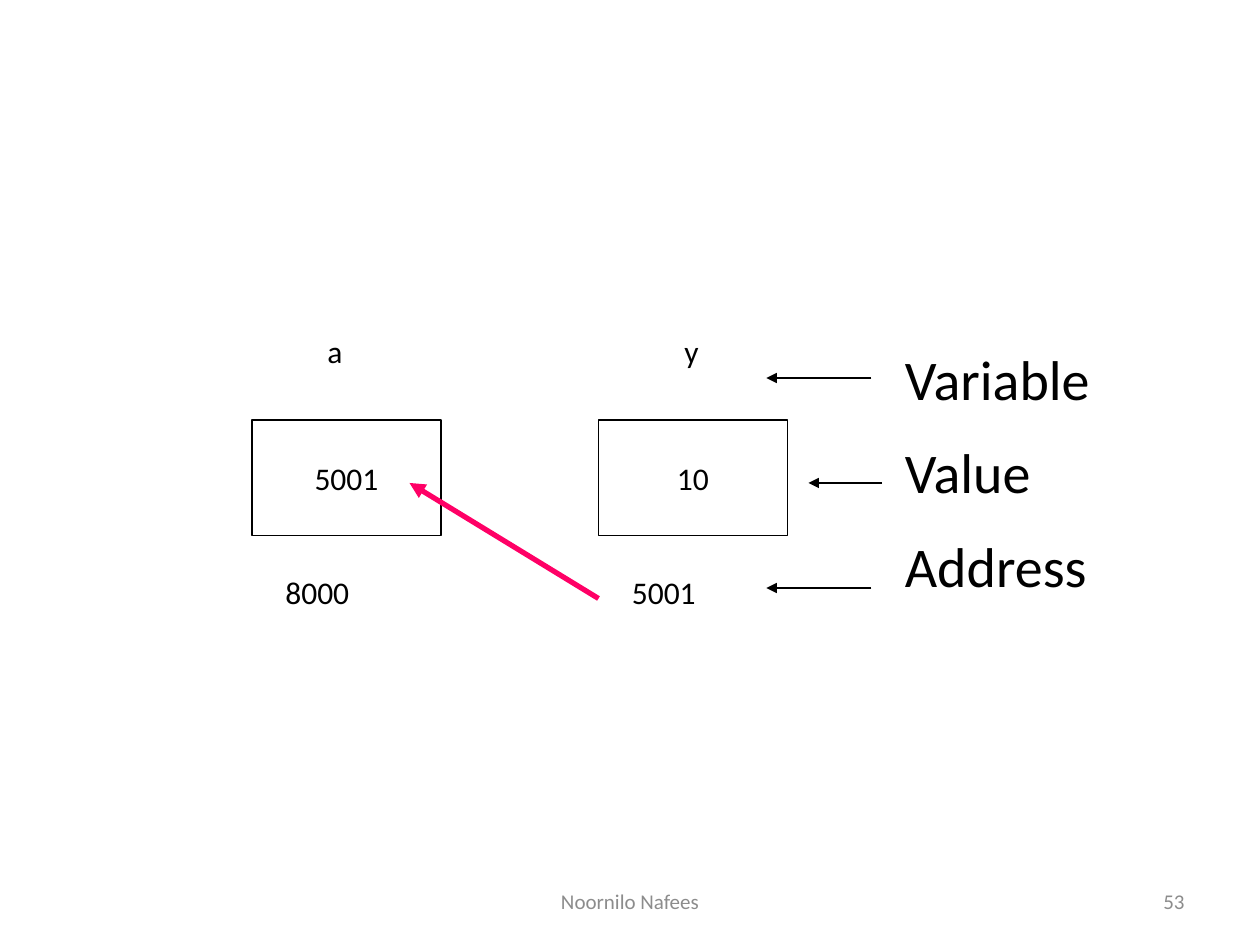
from typing import NamedTuple

from lxml.etree import SubElement
from pptx import Presentation
from pptx.dml.color import RGBColor
from pptx.enum.shapes import MSO_CONNECTOR, MSO_SHAPE
from pptx.enum.text import MSO_ANCHOR as Anchor, PP_ALIGN as Align
from pptx.oxml.ns import qn
from pptx.util import Inches, Pt

BLACK = RGBColor(0x00, 0x00, 0x00)
PINK = RGBColor(0xFF, 0x00, 0x66)
GREY = RGBColor(0x8C, 0x8C, 0x8C)
FONT = "Calibri"

COLUMNS, ROWS = 120, 90
CELL = Inches(10) // COLUMNS


class Area(NamedTuple):
    """Left, top, width and height in grid cells."""
    column: float
    row: float
    columns: float
    rows: float

    def lengths(self) -> list[int]:
        return [round(cells * CELL) for cells in self]


class Label(NamedTuple):
    area: Area
    lines: tuple[str, ...]
    size: int = 18
    color: RGBColor = BLACK
    align: Align = Align.LEFT
    anchor: Anchor = Anchor.TOP


class Variable(NamedTuple):
    name: str
    name_column: int
    value: str
    address: str
    column: int


class Arrow(NamedTuple):
    start: tuple[int, int]
    end: tuple[int, int]
    color: RGBColor = BLACK
    width: float = 0.75


VARIABLES = (
    Variable("a", 30, "5001", "8000", 24),
    Variable("y", 64, "10", "5001", 57),
)
LEGEND = Label(Area(85, 32.2, 25, 26.8), ("Variable", "Value", "Address"), 32)
ARROWS = (
    Arrow((83, 36), (73, 36)),
    Arrow((83, 56), (73, 56)),
    Arrow((84, 46), (77, 46)),
    Arrow((57, 57), (39, 46), PINK, 3),
)
FOOTERS = (
    Label(Area(86, 83.4, 28, 4.8), ("53",), 12, GREY, Align.RIGHT, Anchor.MIDDLE),
    Label(Area(41, 83.4, 38, 4.8), ("Noornilo Nafees",), 12, GREY, Align.CENTER, Anchor.MIDDLE),
)


def write_text(shape, label: Label) -> None:
    frame = shape.text_frame
    frame.word_wrap = True
    frame.vertical_anchor = label.anchor
    frame.text = "\n".join(label.lines)
    for index, paragraph in enumerate(frame.paragraphs):
        paragraph.alignment = label.align
        if index:
            paragraph.space_before = Pt(15)
        font = paragraph.font
        font.name, font.size = FONT, Pt(label.size)
        font.color.rgb = label.color


def add_label(slide, label: Label) -> None:
    write_text(slide.shapes.add_textbox(*label.area.lengths()), label)


def add_variable(slide, variable: Variable) -> None:
    """Draw a memory cell with its name above and its address below."""
    area = Area(variable.column, 40, 18, 11)
    memory = slide.shapes.add_shape(MSO_SHAPE.RECTANGLE, *area.lengths())
    memory.shadow.inherit = False
    memory.fill.background()
    memory.line.color.rgb = BLACK
    memory.line.width = Pt(0.75)
    write_text(memory, Label(area, (variable.value,), align=Align.CENTER, anchor=Anchor.MIDDLE))
    add_label(slide, Label(Area(variable.name_column, 31, 5, 6.8), (variable.name,)))
    add_label(slide, Label(Area(variable.column + 2, 54, 15, 6.8), (variable.address,)))


def add_arrow(slide, arrow: Arrow) -> None:
    ends = [cells * CELL for cells in arrow.start + arrow.end]
    connector = slide.shapes.add_connector(MSO_CONNECTOR.STRAIGHT, *ends)
    connector.line.color.rgb = arrow.color
    connector.line.width = Pt(arrow.width)
    properties = connector.line._get_or_add_ln()
    SubElement(properties, qn("a:tailEnd"), type="triangle")
    SubElement(properties.getparent(), qn("a:effectLst"))


def main() -> None:
    presentation = Presentation()
    presentation.slide_width = COLUMNS * CELL
    presentation.slide_height = ROWS * CELL
    slide = presentation.slides.add_slide(presentation.slide_layouts[6])
    for variable in VARIABLES:
        add_variable(slide, variable)
    add_label(slide, LEGEND)
    for arrow in ARROWS:
        add_arrow(slide, arrow)
    for footer in FOOTERS:
        add_label(slide, footer)
    presentation.save("out.pptx")


if __name__ == "__main__":
    main()
